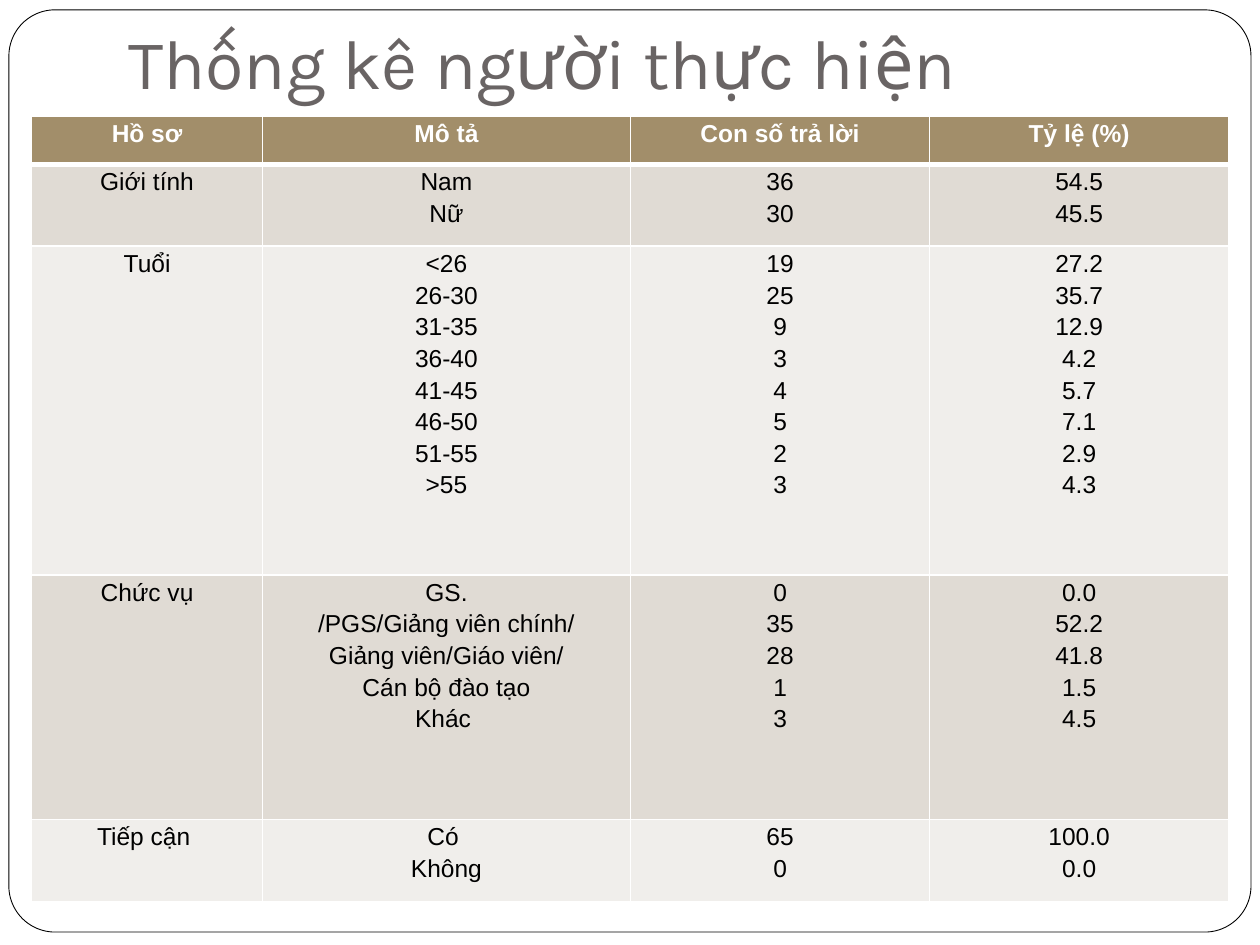
from lxml.etree import SubElement
from pptx import Presentation
from pptx.dml.color import RGBColor
from pptx.enum.shapes import MSO_SHAPE as SHAPE
from pptx.enum.text import MSO_ANCHOR as ANCHOR, MSO_AUTO_SIZE as AUTO_SIZE, PP_ALIGN as ALIGN
from pptx.oxml.ns import qn
from pptx.util import Cm, Pt

COLORS = {
    "white": "FFFFFF",
    "black": "000000",
    "title": "696464",
    "header": "A28E6A",
    "odd": "E0DBD4",
    "even": "F0EEEB",
}
COLUMN_WIDTHS = [4.65, 7.42, 6.03, 6.03]
ROW_HEIGHTS = [0.97, 1.65, 6.63, 4.93, 1.65]
ROWS = [
    ("Hồ sơ", "Mô tả", "Con số trả lời", "Tỷ lệ (%)"),
    ("Giới tính", "Nam\nNữ", "36\n30", "54.5\n45.5"),
    (
        "Tuổi",
        "<26\n26-30\n31-35\n36-40\n41-45\n46-50\n51-55\n>55",
        "19\n25\n9\n3\n4\n5\n2\n3",
        "27.2\n35.7\n12.9\n4.2\n5.7\n7.1\n2.9\n4.3",
    ),
    (
        "Chức vụ",
        "GS.\n/PGS/Giảng viên chính/\nGiảng viên/Giáo viên/\nCán bộ đào tạo\nKhác ",
        "0\n35\n28\n1\n3",
        "0.0\n52.2\n41.8\n1.5\n4.5",
    ),
    ("Tiếp cận ", "Có \nKhông", "65\n0", "100.0\n0.0"),
]


def rgb(name):
    return RGBColor.from_string(COLORS[name])


def format_font(font, name, size, color, bold=False):
    font.name = name
    font.size = Pt(size)
    font.bold = bold
    font.color.rgb = rgb(color)


def add_frame(slide, left, top, width, height):
    sp = slide.shapes.add_shape(SHAPE.ROUNDED_RECTANGLE, Cm(left), Cm(top), Cm(width), Cm(height))
    sp.adjustments[0] = 0.05
    sp.shadow.inherit = False
    sp.fill.solid()
    sp.fill.fore_color.rgb = rgb("white")
    sp.line.color.rgb = rgb("black")
    sp.line.width = Pt(0.5)
    slide.shapes.element.insert(2, sp.element)


def place_title(slide, left, top, width, height):
    sp = slide.shapes.title
    sp.left, sp.top, sp.width, sp.height = Cm(left), Cm(top), Cm(width), Cm(height)
    tf = sp.text_frame
    tf.text = "Thống kê người thực hiện"
    tf.auto_size = AUTO_SIZE.NONE
    tf.word_wrap = True
    tf.vertical_anchor = ANCHOR.BOTTOM
    tf.margin_left = tf.margin_right = tf.margin_bottom = Cm(0.25)
    tf.margin_top = Cm(0.13)
    p = tf.paragraphs[0]
    p.alignment = ALIGN.LEFT
    format_font(p.runs[0].font, "Karla", 40, "title")


def set_borders(cell, row):
    tc_pr = cell._tc.get_or_add_tcPr()
    widths = {"lnL": 1, "lnR": 1, "lnT": 3 if row == 1 else 1, "lnB": 3 if row == 0 else 1}
    for index, (side, width) in enumerate(widths.items()):
        ln = SubElement(tc_pr, qn(f"a:{side}"), w=str(Pt(width)))
        SubElement(SubElement(ln, qn("a:solidFill")), qn("a:srgbClr"), val=COLORS["white"])
        tc_pr.insert(index, ln)


def fill_cell(cell, text, row):
    is_header = row == 0
    cell.margin_left = cell.margin_right = Cm(0.18)
    cell.margin_top = cell.margin_bottom = 0
    cell.vertical_anchor = ANCHOR.TOP
    cell.fill.solid()
    cell.fill.fore_color.rgb = rgb("header" if is_header else "odd" if row % 2 else "even")
    set_borders(cell, row)
    cell.text_frame.text = text
    for p in cell.text_frame.paragraphs:
        p.alignment = ALIGN.CENTER
        p.line_spacing = 1.15
        format_font(p.runs[0].font, "Arial", 14, "white" if is_header else "black", is_header)


def add_statistics_table(slide, left, top):
    table = slide.shapes.add_table(
        len(ROWS), len(COLUMN_WIDTHS), Cm(left), Cm(top),
        Cm(sum(COLUMN_WIDTHS)), Cm(sum(ROW_HEIGHTS)),
    ).table
    for column, width in zip(table.columns, COLUMN_WIDTHS):
        column.width = Cm(width)
    for row, (height, texts) in enumerate(zip(ROW_HEIGHTS, ROWS)):
        table.rows[row].height = Cm(height)
        for col, text in enumerate(texts):
            fill_cell(table.cell(row, col), text, row)


def main():
    prs = Presentation()
    prs.slide_width, prs.slide_height = Cm(25.4), Cm(19.05)
    slide = prs.slides.add_slide(prs.slide_layouts[5])
    add_frame(slide, 0.18, 0.2, 25.04, 18.59)
    place_title(slide, 2.34, -0.84, 21.59, 3.18)
    add_statistics_table(slide, 0.64, 2.34)
    prs.save("out.pptx")


if __name__ == "__main__":
    main()
